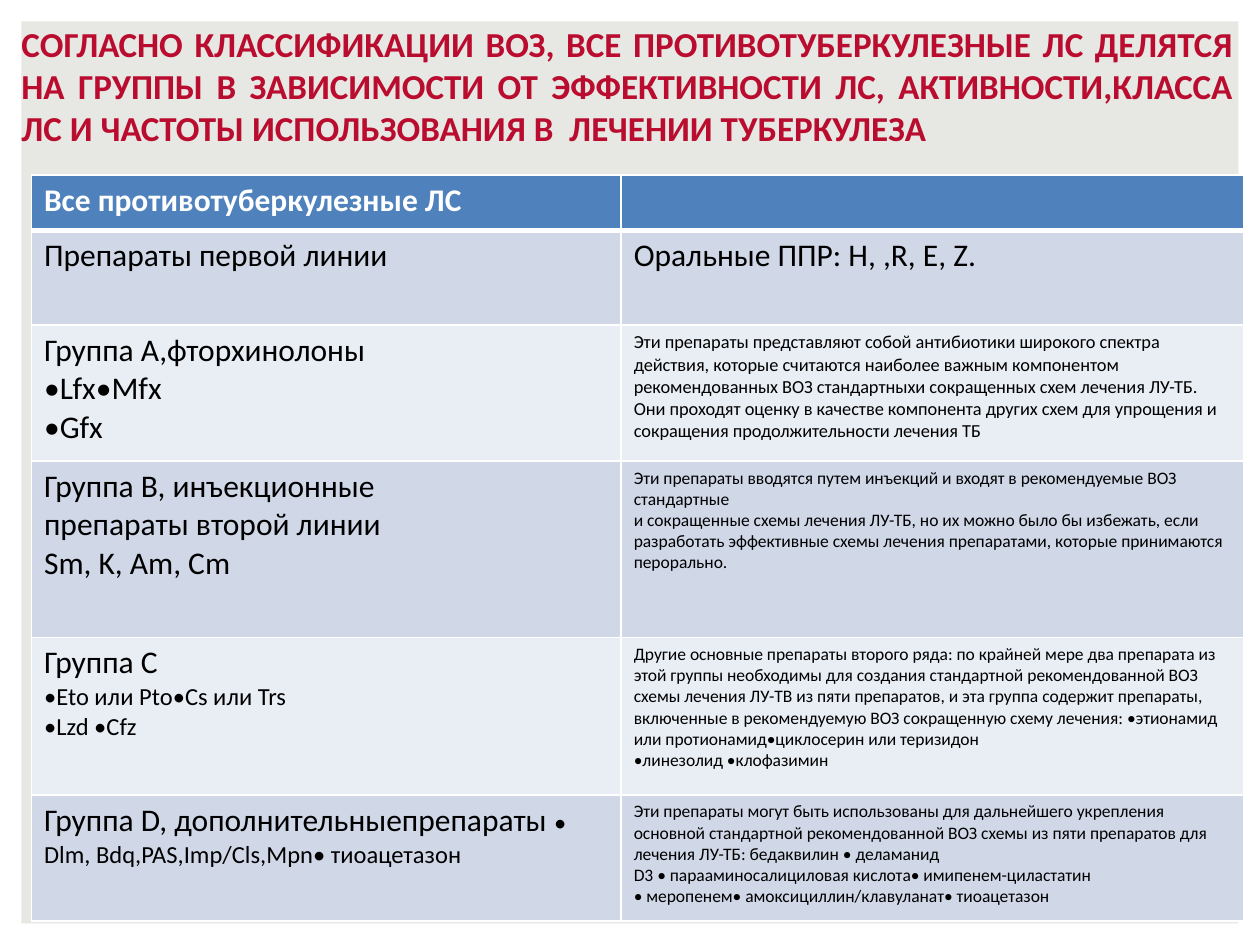
from dataclasses import dataclass

from lxml.etree import SubElement
from pptx import Presentation
from pptx.dml.color import RGBColor
from pptx.enum.shapes import MSO_SHAPE
from pptx.enum.text import PP_ALIGN
from pptx.oxml.ns import qn
from pptx.util import Inches, Pt


@dataclass(frozen=True)
class Theme:
    font: str = "Calibri"
    panel: str = "E7E7E4"
    title: str = "B90C2E"
    header: str = "4F81BD"
    bands: tuple = ("E9EDF4", "D0D8E8")
    white: str = "FFFFFF"
    black: str = "000000"
    title_size: float = 20
    large: float = 18
    medium: float = 14
    note: float = 10.5
    small: float = 10


THEME = Theme()

TITLE = (
    "СОГЛАСНО КЛАССИФИКАЦИИ ВОЗ, ВСЕ ПРОТИВОТУБЕРКУЛЕЗНЫЕ ЛС ДЕЛЯТСЯ "
    "НА ГРУППЫ В ЗАВИСИМОСТИ ОТ ЭФФЕКТИВНОСТИ ЛС, АКТИВНОСТИ,КЛАССА "
    "ЛС И ЧАСТОТЫ ИСПОЛЬЗОВАНИЯ В  ЛЕЧЕНИИ ТУБЕРКУЛЕЗА"
)
COLUMN_WIDTHS = (4.68, 4.94)
ROW_HEIGHTS = (0.44, 0.75, 1.08, 1.4, 1.25, 1)


def large(*texts):
    return [[(text, THEME.large)] for text in texts]


def medium(*texts):
    return [[(text, THEME.medium)] for text in texts]


def note(*texts):
    return [[(text, THEME.note)] for text in texts]


def small(*texts):
    return [[(text, THEME.small)] for text in texts]


# Each cell is a list of paragraphs; each paragraph is a list of (text, size).
ROWS = [
    (large("Все противотуберкулезные ЛС"), large("")),
    (large("Препараты первой линии"), large("Оральные ППР: Н, ,R, E, Z.")),
    (
        large("Группа А,фторхинолоны", "•Lfx•Mfx", "•Gfx"),
        note(
            "Эти препараты представляют собой антибиотики широкого спектра "
            "действия, которые считаются наиболее важным компонентом "
            "рекомендованных ВОЗ стандартныхи сокращенных схем лечения ЛУ-ТБ. "
            "Они проходят оценку в качестве компонента других схем для "
            "упрощения и сокращения продолжительности лечения ТБ"
        ),
    ),
    (
        large("Группа B, инъекционные", "препараты второй линии", "Sm, K, Am, Cm"),
        small(
            "Эти препараты вводятся путем инъекций и входят в рекомендуемые ВОЗ "
            "стандартные",
            "и сокращенные схемы лечения ЛУ-ТБ, но их можно было бы избежать, "
            "если разработать эффективные схемы лечения препаратами, которые "
            "принимаются перорально.",
        ),
    ),
    (
        large("Группа С") + medium("•Eto или Pto•Cs или Trs", "•Lzd •Cfz"),
        small(
            "Другие основные препараты второго ряда: по крайней мере два "
            "препарата из этой группы необходимы для создания стандартной "
            "рекомендованной ВОЗ схемы лечения ЛУ-TB из пяти препаратов, и эта "
            "группа содержит препараты, включенные в рекомендуемую ВОЗ "
            "сокращенную схему лечения: •этионамид или "
            "протионамид•циклосерин или теризидон",
            "•линезолид •клофазимин",
        ),
    ),
    (
        [[
            ("Группа D, дополнительныепрепараты ", THEME.large),
            ("• Dlm, Bdq,PAS,Imp/Cls,Mpn• тиоацетазон", THEME.medium),
        ]],
        small(
            "Эти препараты могут быть использованы для дальнейшего укрепления "
            "основной стандартной рекомендованной ВОЗ схемы из пяти препаратов "
            "для лечения ЛУ-ТБ: бедаквилин • деламанид",
            "D3 • парааминосалициловая кислота• имипенем-циластатин",
            "• меропенем• амоксициллин/клавуланат• тиоацетазон",
        ),
    ),
]


def style_font(font, size, color, bold):
    font.name = THEME.font
    font.size = Pt(size)
    font.bold = bold
    font.color.rgb = RGBColor.from_string(color)


def add_panel(page):
    panel = page.shapes.add_shape(
        MSO_SHAPE.RECTANGLE, Inches(0.17), Inches(0.17), Inches(9.66), Inches(7.16)
    )
    panel.shadow.inherit = False
    panel.fill.solid()
    panel.fill.fore_color.rgb = RGBColor.from_string(THEME.panel)
    panel.line.fill.background()


def add_title(page):
    box = page.shapes.add_textbox(
        Inches(0.17), Inches(0.17), Inches(9.62), Inches(1.02)
    )
    frame = box.text_frame
    frame.word_wrap = True
    frame.margin_left = frame.margin_right = frame.margin_bottom = 0
    frame.margin_top = Inches(0.01)
    para = frame.paragraphs[0]
    para.text = TITLE
    para.alignment = PP_ALIGN.JUSTIFY
    para.space_before = Pt(1)
    style_font(para.font, THEME.title_size, THEME.title, True)


def set_borders(cell, bottom_width):
    """Draw white cell borders; call before the fill, which must follow them."""
    properties = cell._tc.get_or_add_tcPr()
    for side, width in (("L", 1), ("R", 1), ("T", 1), ("B", bottom_width)):
        line = SubElement(properties, qn(f"a:ln{side}"), w=str(Pt(width)))
        fill = SubElement(line, qn("a:solidFill"))
        SubElement(fill, qn("a:srgbClr"), val=THEME.white)


def write_cell(cell, paragraphs, color, bold):
    frame = cell.text_frame
    for index, spans in enumerate(paragraphs):
        para = frame.add_paragraph() if index else frame.paragraphs[0]
        style_font(para.font, spans[0][1], color, bold)
        for text, size in spans:
            if text:
                span = para.add_run()
                span.text = text
                if size != spans[0][1]:
                    span.font.size = Pt(size)


def add_drug_table(page):
    table = page.shapes.add_table(
        len(ROWS), len(COLUMN_WIDTHS), Inches(0.25), Inches(1.39),
        Inches(sum(COLUMN_WIDTHS)), Inches(sum(ROW_HEIGHTS)),
    ).table
    for column, width in zip(table.columns, COLUMN_WIDTHS):
        column.width = Inches(width)
    for index, (row, height, contents) in enumerate(
        zip(table.rows, ROW_HEIGHTS, ROWS)
    ):
        row.height = Inches(height)
        is_header = index == 0
        fill = THEME.header if is_header else THEME.bands[index % 2]
        color = THEME.white if is_header else THEME.black
        for cell, paragraphs in zip(row.cells, contents):
            set_borders(cell, 3 if is_header else 1)
            cell.fill.solid()
            cell.fill.fore_color.rgb = RGBColor.from_string(fill)
            write_cell(cell, paragraphs, color, is_header)


def main():
    deck = Presentation()
    deck.slide_width, deck.slide_height = Inches(10), Inches(7.5)
    page = deck.slides.add_slide(deck.slide_layouts[6])
    add_panel(page)
    add_title(page)
    add_drug_table(page)
    deck.save("out.pptx")


if __name__ == "__main__":
    main()
